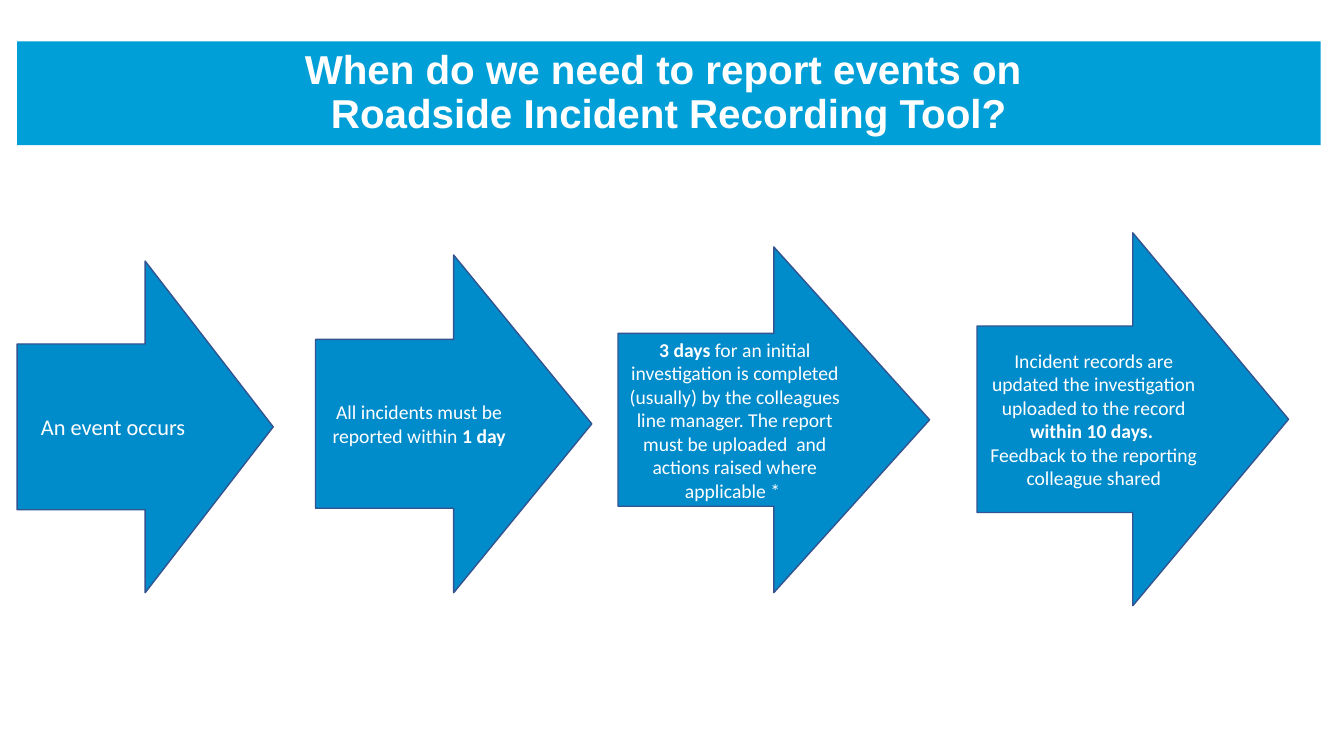
from pptx import Presentation
from pptx.dml.color import RGBColor
from pptx.enum.shapes import MSO_SHAPE as Shape
from pptx.enum.text import MSO_ANCHOR as Anchor, PP_ALIGN as Align
from pptx.util import Inches, Pt

WHITE = "FFFFFF"
BANNER_BLUE = "009FD7"
ARROW_BLUE = "008BCB"
ARROW_EDGE = "325491"

TITLE = "When do we need to report events on \vRoadside Incident Recording Tool?"

# Each step: box, text size, paragraphs made of (text, bold) runs
STEPS = [
    ((0.17, 2.59, 2.54, 3.29), 16, [[("An event occurs", False)]]),
    ((3.13, 2.53, 2.74, 3.35), 14, [
        [("All incidents must be reported within ", False), ("1 day", True)],
    ]),
    ((6.13, 2.45, 3.09, 3.43), 14, [
        [("3 days ", True),
         ("for an initial investigation is completed (usually) by the "
          "colleagues line manager. The report must be uploaded  and "
          "actions raised where applicable * ", False)],
    ]),
    ((9.69, 2.31, 3.09, 3.7), 14, [
        [("Incident records are updated the investigation uploaded to the "
          "record ", False), ("within 10 days. ", True)],
        [("Feedback to the reporting colleague shared", False)],
    ]),
]


def color(hex_string):
    return RGBColor.from_string(hex_string)


def add_filled_shape(slide, preset, box, fill):
    shape = slide.shapes.add_shape(preset, *map(Inches, box))
    shape.shadow.inherit = False
    shape.fill.solid()
    shape.fill.fore_color.rgb = color(fill)
    shape.text_frame.word_wrap = True
    shape.text_frame.vertical_anchor = Anchor.MIDDLE
    return shape


def style_paragraph(paragraph, font_name, size):
    paragraph.alignment = Align.CENTER
    paragraph.font.name = font_name
    paragraph.font.size = Pt(size)
    paragraph.font.color.rgb = color(WHITE)


def add_banner(slide):
    banner = add_filled_shape(slide, Shape.RECTANGLE, (0.17, 0.41, 12.93, 1.03), BANNER_BLUE)
    banner.line.fill.background()
    heading = banner.text_frame.paragraphs[0]
    heading.text = TITLE
    style_paragraph(heading, "Arial", 28.8)
    heading.font.bold = True
    heading.line_spacing = 0.9


def add_step_arrow(slide, box, size, paragraphs):
    arrow = add_filled_shape(slide, Shape.RIGHT_ARROW, box, ARROW_BLUE)
    arrow.line.color.rgb = color(ARROW_EDGE)
    arrow.line.width = Pt(1)
    frame = arrow.text_frame
    for index, runs in enumerate(paragraphs):
        paragraph = frame.add_paragraph() if index else frame.paragraphs[0]
        style_paragraph(paragraph, "Calibri", size)
        for text, bold in runs:
            run = paragraph.add_run()
            run.text = text
            run.font.bold = bold


def main():
    deck = Presentation()
    deck.slide_width = Inches(13.33)
    deck.slide_height = Inches(7.5)
    slide = deck.slides.add_slide(deck.slide_layouts[6])
    add_banner(slide)
    for box, size, paragraphs in STEPS:
        add_step_arrow(slide, box, size, paragraphs)
    deck.save("out.pptx")


if __name__ == "__main__":
    main()
